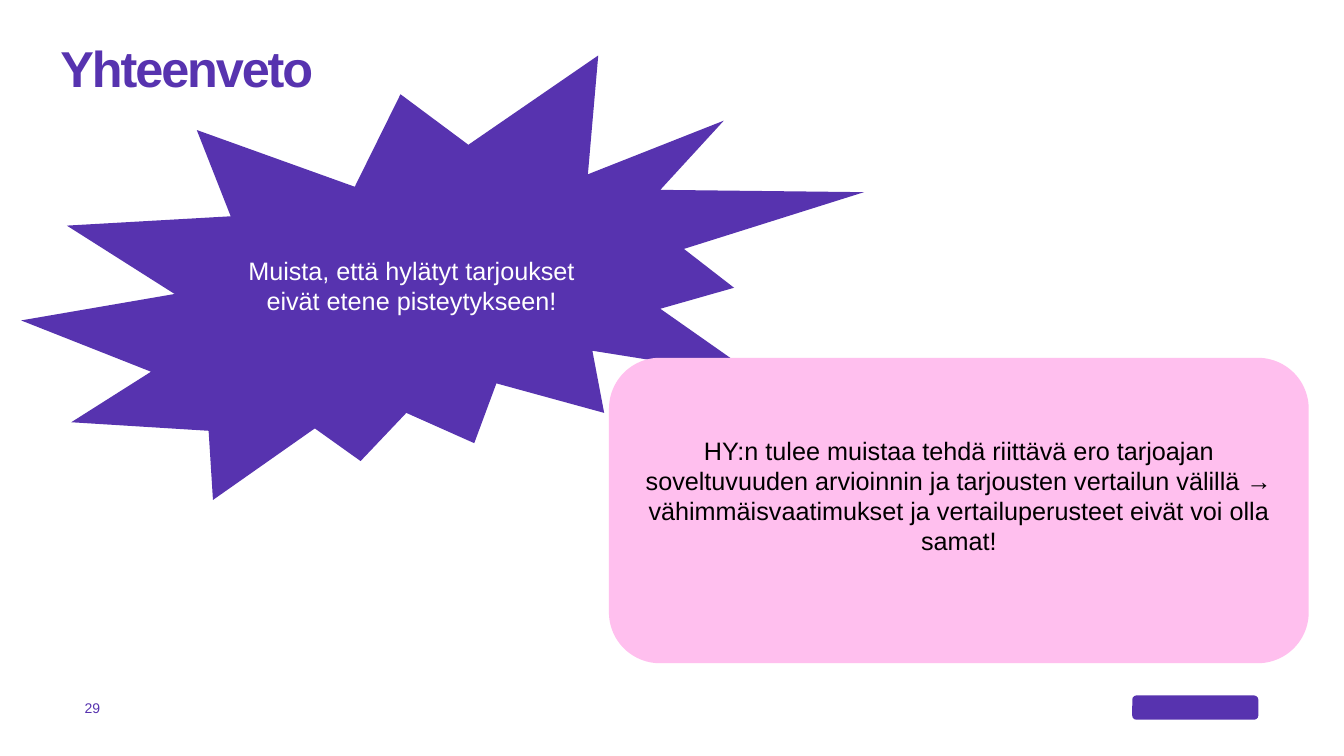
from pptx import Presentation
from pptx.dml.color import RGBColor
from pptx.enum.shapes import MSO_SHAPE as Shape
from pptx.enum.text import MSO_ANCHOR as Anchor, PP_ALIGN as Align
from pptx.util import Inches, Pt

PURPLE, PINK, WHITE, BLACK = "5733AF", "FFBFEE", "FFFFFF", "000000"


def color(hex_value):
    return RGBColor.from_string(hex_value)


def write(shape, text, size, text_color, anchor, align):
    frame = shape.text_frame
    frame.word_wrap = True
    frame.vertical_anchor = anchor
    paragraph = frame.paragraphs[0]
    paragraph.alignment = align
    run = paragraph.add_run()
    run.text = text
    run.font.name = "Arial"
    run.font.size = Pt(size)
    run.font.color.rgb = color(text_color)
    return run


presentation = Presentation()
presentation.slide_width = Inches(13.33)
presentation.slide_height = Inches(7.5)
slide = presentation.slides.add_slide(presentation.slide_layouts[6])

# Title and page number
labels = [
    ("Yhteenveto", (0.6, 0.44, 11.66, 1.73), 36, Anchor.TOP),
    ("29", (0.84, 6.9, 0.47, 0.24), 10, Anchor.MIDDLE),
]
for text, box, size, anchor in labels:
    label = slide.shapes.add_textbox(*map(Inches, box))
    frame = label.text_frame
    frame.margin_left = frame.margin_right = 0
    frame.margin_top = frame.margin_bottom = 0
    run = write(label, text, size, PURPLE, anchor, Align.LEFT)
    if text == "Yhteenveto":
        frame.paragraphs[0].line_spacing = 0.9
        run.font.bold = True
        run.font._element.set("spc", "-150")  # tight letter spacing

# Burst, message card and plain brand mark
callouts = [
    (Shape.EXPLOSION2, (0.21, 0.55, 8.36, 4.41), PURPLE, WHITE, 0.05,
     "Muista, että hylätyt tarjoukset eivät etene pisteytykseen!"),
    (Shape.ROUNDED_RECTANGLE, (6.04, 3.55, 6.94, 3.03), PINK, BLACK, 0.35,
     "HY:n tulee muistaa tehdä riittävä ero tarjoajan soveltuvuuden "
     "arvioinnin ja tarjousten vertailun välillä → vähimmäisvaatimukset "
     "ja vertailuperusteet eivät voi olla samat!"),
    (Shape.ROUNDED_RECTANGLE, (11.23, 6.9, 1.25, 0.24), PURPLE, WHITE, 0.05, ""),
]
for kind, box, fill, text_color, bottom_margin, text in callouts:
    shape = slide.shapes.add_shape(kind, *map(Inches, box))
    shape.shadow.inherit = False
    shape.fill.solid()
    shape.fill.fore_color.rgb = color(fill)
    shape.line.fill.background()
    if text:
        shape.text_frame.margin_bottom = Inches(bottom_margin)
        write(shape, text, 18, text_color, Anchor.MIDDLE, Align.CENTER)

presentation.save("out.pptx")
